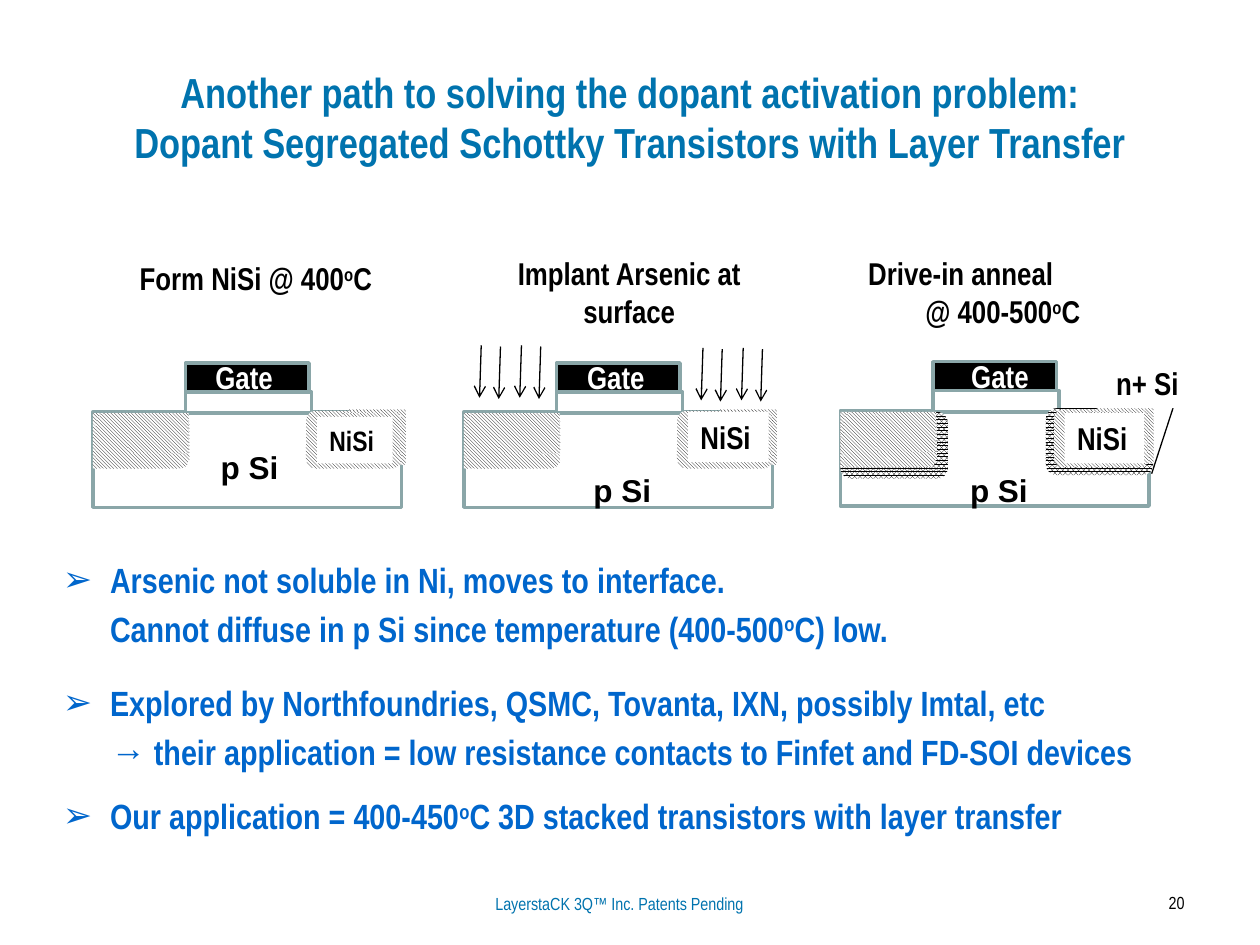
from lxml.etree import SubElement
from pptx import Presentation
from pptx.dml.color import RGBColor
from pptx.enum.dml import MSO_PATTERN as Pattern
from pptx.enum.shapes import MSO_CONNECTOR as Connector, MSO_SHAPE as Shape
from pptx.enum.text import MSO_ANCHOR as Anchor, MSO_AUTO_SIZE as AutoSize, PP_ALIGN as Align
from pptx.oxml.ns import qn
from pptx.util import Pt

NARROW = "Arial Narrow"
BLACK, WHITE, EDGE = "000000", "FFFFFF", "8AA6A8"
TITLE_BLUE, TEXT_BLUE = "0073AE", "0066CC"
HATCH = Pattern.DARK_DOWNWARD_DIAGONAL


def color(value):
    return RGBColor.from_string(value)


def write(para, text, size=18, font=NARROW, ink=BLACK, bold=True, align=Align.LEFT):
    para.alignment = align
    for index, part in enumerate(text.split("^")):
        span = para.add_run()
        span.text = part
        span.font.name = font
        span.font.size = Pt(size)
        span.font.bold = bold
        span.font.color.rgb = color(ink)
        if index % 2:
            span.font._element.set("baseline", "30000")


def add_text(page, place, text, **style):
    box = page.shapes.add_textbox(*map(Pt, place))
    box.text_frame.word_wrap = True
    write(box.text_frame.paragraphs[0], text, **style)
    return box


def add_block(page, place, fill=WHITE, pattern=None, edge=None, kind=Shape.RECTANGLE):
    block = page.shapes.add_shape(kind, *map(Pt, place))
    block.shadow.inherit = False
    if pattern is None:
        block.fill.solid()
        block.fill.fore_color.rgb = color(fill)
    else:
        block.fill.patterned()
        block.fill.pattern = pattern
        block.fill.fore_color.rgb = color(BLACK)
        block.fill.back_color.rgb = color(WHITE)
    if edge:
        block.line.color.rgb = color(edge)
        block.line.width = Pt(2)
    else:
        block.line.fill.background()
    return block


def add_label(page, place, text, size=18):
    frame = add_block(page, place).text_frame
    frame.word_wrap = True
    frame.vertical_anchor = Anchor.MIDDLE
    write(frame.paragraphs[0], text, size=size)


def add_line(page, start, end, arrow=False):
    line = page.shapes.add_connector(Connector.STRAIGHT, *map(Pt, start + end))
    line.line.color.rgb = color(BLACK)
    line.line.width = Pt(0.75)
    if arrow:
        SubElement(line.line._get_or_add_ln(), qn("a:tailEnd"), type="arrow")
    SubElement(line._element.spPr, qn("a:effectLst"))


def add_transistor(page, left, top, gate_left, silicon, contact, contact_size=18, halo=False):
    add_block(page, (left, top, 176.4, 54.5), edge=EDGE)
    add_block(page, (left + 53, top - 28, 70.6, 27.4), fill=BLACK, edge=EDGE)
    add_block(page, (left + 53, top - 11.5, 72, 12.2), edge=EDGE)
    if halo:
        for offset, rise in ((0, 0.7), (117.4, -1.4)):
            add_block(page, (left + offset, top + rise, 61.5, 38.2),
                      pattern=Pattern.PERCENT_80, kind=Shape.ROUNDED_RECTANGLE)
    for offset, rise, width, height, kind in (
            (0, 0.7, 34.6, 31.7, Shape.RECTANGLE),
            (2, 0.7, 53.3, 31.7, Shape.ROUNDED_RECTANGLE),
            (20.2, 0.7, 34.6, 23, Shape.RECTANGLE),
            (146.6, -1.4, 32.4, 31.7, Shape.RECTANGLE),
            (121.9, -0.7, 54.7, 33.1, Shape.ROUNDED_RECTANGLE),
            (143, 0.7, 32.4, 23, Shape.RECTANGLE)):
        add_block(page, (left + offset, top + rise, width, height), pattern=HATCH, kind=kind)
    rise, width, height = contact
    add_label(page, (left + 128.2, top + rise, width, height), "NiSi", contact_size)
    add_text(page, (left + gate_left, top - 34.5, 85, 28.8), "Gate", ink=WHITE)
    offset, rise = silicon
    add_text(page, (left + offset, top + rise, 85, 28), "p Si", font="Arial")


def add_implant_arrows(page, left, top):
    for offset, drop in ((0, 0), (11, 0.7), (23, 0), (34, 0.7)):
        x, y = left + offset, top + drop
        add_line(page, (x, y), (x - 1, y + 30), arrow=True)


def add_points(page, place, points):
    box = page.shapes.add_textbox(*map(Pt, place))
    frame = box.text_frame
    frame.word_wrap = True
    for index, (text, bulleted, margin, before) in enumerate(points):
        para = frame.add_paragraph() if index else frame.paragraphs[0]
        properties = para._p.get_or_add_pPr()
        properties.set("marL", str(Pt(margin)))
        properties.set("indent", str(Pt(-27) if bulleted else 0))
        para.space_before = Pt(before)
        if bulleted:
            SubElement(properties, qn("a:buFont"), typeface="Arial")
            SubElement(properties, qn("a:buChar"), char="➢")
        else:
            SubElement(properties, qn("a:buNone"))
        write(para, text, size=20, ink=TEXT_BLUE)


def add_title(page, lines):
    title = page.shapes.title
    title.left, title.top, title.width, title.height = map(Pt, (36, 21.6, 648, 90))
    frame = title.text_frame
    frame.auto_size = AutoSize.NONE
    frame.word_wrap = True
    frame.vertical_anchor = Anchor.MIDDLE
    para = frame.paragraphs[0]
    for index, line in enumerate(lines):
        if index:
            para.add_line_break()
        write(para, line, size=24, ink=TITLE_BLUE, align=Align.CENTER)


def main():
    deck = Presentation()
    deck.slide_width, deck.slide_height = Pt(720), Pt(540)
    page = deck.slides.add_slide(deck.slide_layouts[5])
    add_title(page, ("Another path to solving the dopant activation problem:",
                     "Dopant Segregated Schottky Transistors with Layer Transfer"))

    add_transistor(page, 53, 235.4, 63, (66, 17.3), (2.9, 43.2, 26.6), contact_size=16)
    add_transistor(page, 265, 235.4, 63.4, (67, 30.3), (0, 46, 28.8))
    add_transistor(page, 480.2, 234.7, 67.7, (67, 31), (1.4, 45.4, 28.8), halo=True)

    add_text(page, (72.7, 144.7, 155, 28.8), "Form NiSi @ 400^o^C")
    add_text(page, (273.6, 141.8, 172, 51), "Implant Arsenic at surface", align=Align.CENTER)
    anneal = add_text(page, (489, 141.8, 168, 51), "Drive-in anneal")
    write(anneal.text_frame.add_paragraph(), "@ 400-500^o^C", align=Align.CENTER)

    add_implant_arrows(page, 275, 197.3)
    add_implant_arrows(page, 401.7, 198.8)
    add_line(page, (671, 231.1), (658.1, 270.7))
    add_label(page, (630.7, 204.5, 59.8, 28.8), "n+ Si")

    add_points(page, (28.8, 315.4, 648, 170), (
        ("Arsenic not soluble in Ni, moves to interface.", True, 27, 0),
        ("Cannot diffuse in p Si since temperature (400-500^o^C) low.", False, 27, 4),
        ("Explored by Northfoundries, QSMC, Tovanta, IXN, possibly Imtal, etc", True, 27, 18.5),
        ("→ their application = low resistance contacts to Finfet and FD-SOI devices",
         False, 27.5, 4),
        ("Our application = 400-450^o^C 3D stacked transistors with layer transfer",
         True, 27, 12.5)))

    add_text(page, (239.8, 506.9, 228.2, 19), "LayerstaCK 3Q™ Inc. Patents Pending",
             size=10, ink=TITLE_BLUE, bold=False, align=Align.CENTER)
    add_text(page, (604, 506.2, 80, 23.8), "20", size=10, bold=False, align=Align.RIGHT)
    deck.save("out.pptx")


if __name__ == "__main__":
    main()
